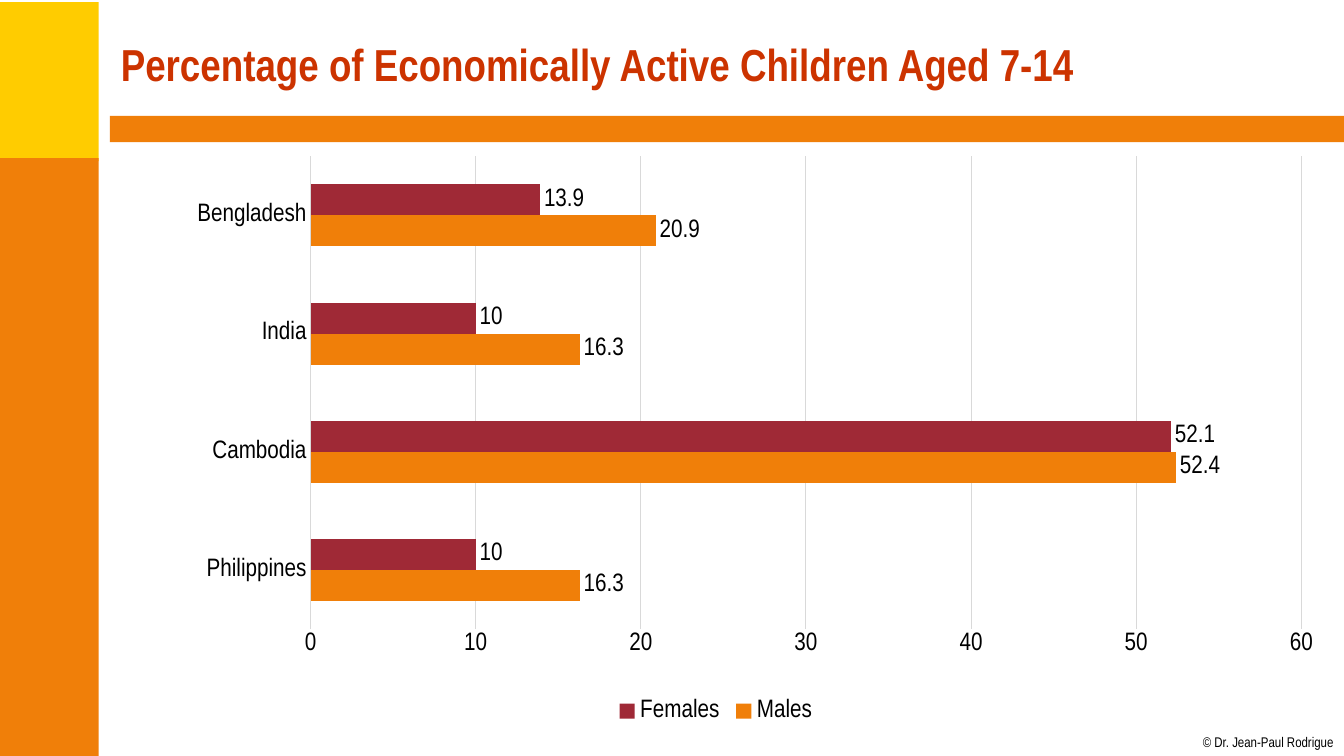
"""Build a slide charting the percentage of economically active children by country."""
from dataclasses import dataclass

import lxml.etree
import pptx
import pptx.chart.data
import pptx.dml.color
import pptx.enum.chart
import pptx.enum.shapes
import pptx.enum.text
import pptx.oxml
import pptx.oxml.ns
import pptx.util

Inches = pptx.util.Inches
FONT = "Arial Narrow"
COLORS = {
    "yellow": "FFCC00",
    "orange": "F07F09",
    "crimson": "9F2936",
    "title": "CC3300",
    "text": "000000",
    "grid": "D9D9D9",
}


@dataclass(frozen=True)
class Band:
    left: float
    top: float
    width: float
    height: float
    color: str


@dataclass(frozen=True)
class Caption:
    text: str
    left: float
    top: float
    width: float
    height: float
    size: float
    color: str
    bold: bool = False
    margin_x: float = 0
    wrap: bool = False


@dataclass(frozen=True)
class Group:
    name: str
    percentages: tuple[float, ...]
    color: str


BANDS = (
    Band(-0.02, 0.02, 1, 1.58, "yellow"),
    Band(-0.02, 1.57, 1, 5.93, "orange"),
    Band(1.09, 1.15, 12.24, 0.26, "orange"),
)
CAPTIONS = (
    Caption("© Dr. Jean-Paul Rodrigue", 11.93, 7.28, 1.31, 0.17, 10, "text"),
    Caption("Percentage of Economically Active Children Aged 7-14",
            1.1, 0.11, 12, 1.04, 32, "title", True, 0.1, True),
)
COUNTRIES = ("Philippines", "Cambodia", "India", "Bengladesh")
GROUPS = (
    Group("Males", (16.3, 52.4, 16.3, 20.9), "orange"),
    Group("Females", (10, 52.1, 10, 13.9), "crimson"),
)
PLOT_AREA = {"x": 0.165, "y": 0.021, "w": 0.819, "h": 0.81}


def rgb(color: str) -> pptx.dml.color.RGBColor:
    """Return the named colour."""
    return pptx.dml.color.RGBColor.from_string(COLORS[color])


def style_font(font, size: float, color: str = "text", bold: bool = False) -> None:
    """Apply the slide typeface with a size and colour."""
    font.name = FONT
    font.size = pptx.util.Pt(size)
    font.bold = bold
    font.color.rgb = rgb(color)


def draw_band(slide, band: Band) -> None:
    """Draw one solid decorative band."""
    shape = slide.shapes.add_shape(
        pptx.enum.shapes.MSO_SHAPE.RECTANGLE, Inches(band.left), Inches(band.top),
        Inches(band.width), Inches(band.height))
    shape.shadow.inherit = False
    shape.fill.solid()
    shape.fill.fore_color.rgb = rgb(band.color)
    shape.line.fill.background()


def draw_caption(slide, caption: Caption) -> None:
    """Draw one line of text."""
    box = slide.shapes.add_textbox(
        Inches(caption.left), Inches(caption.top),
        Inches(caption.width), Inches(caption.height))
    frame = box.text_frame
    frame.word_wrap = caption.wrap
    frame.vertical_anchor = pptx.enum.text.MSO_ANCHOR.MIDDLE
    frame.margin_left = frame.margin_right = Inches(caption.margin_x)
    frame.margin_top = frame.margin_bottom = 0
    paragraph = frame.paragraphs[0]
    paragraph.text = caption.text
    style_font(paragraph.font, caption.size, caption.color, caption.bold)


def style_line(line) -> None:
    """Apply the thin grey chart line."""
    line.color.rgb = rgb("grid")
    line.width = pptx.util.Pt(0.75)


def place_plot_area(chart) -> None:
    """Fix the inner plot area as fractions of the chart."""
    plot_area = chart.plots[0]._element.getparent()
    for layout in plot_area.findall(pptx.oxml.ns.qn("c:layout")):
        plot_area.remove(layout)
    layout = pptx.oxml.parse_xml(f"<c:layout {pptx.oxml.ns.nsdecls('c')}/>")
    manual = lxml.etree.SubElement(layout, pptx.oxml.ns.qn("c:manualLayout"))
    settings = {"layoutTarget": "inner", "xMode": "edge", "yMode": "edge", **PLOT_AREA}
    for tag, value in settings.items():
        lxml.etree.SubElement(manual, pptx.oxml.ns.qn(f"c:{tag}"), val=str(value))
    plot_area.insert(0, layout)


def draw_chart(slide) -> None:
    """Draw the clustered bars of both groups by country."""
    data = pptx.chart.data.CategoryChartData()
    data.categories = COUNTRIES
    for group in GROUPS:
        data.add_series(group.name, group.percentages)
    chart = slide.shapes.add_chart(
        pptx.enum.chart.XL_CHART_TYPE.BAR_CLUSTERED,
        Inches(1.1), Inches(1.43), Inches(12), Inches(5.79), data).chart
    style_font(chart.font, 18)
    chart.has_title = False
    chart.has_legend = True
    chart.legend.position = pptx.enum.chart.XL_LEGEND_POSITION.BOTTOM
    chart.legend.include_in_layout = False
    style_font(chart.legend.font, 18)

    bars = chart.plots[0]
    bars.gap_width = 182
    bars.overlap = 0
    bars.vary_by_categories = False
    for group, series in zip(GROUPS, bars.series):
        series.format.fill.solid()
        series.format.fill.fore_color.rgb = rgb(group.color)
        series.invert_if_negative = False
        labels = series.data_labels
        labels.show_value = True
        labels.position = pptx.enum.chart.XL_LABEL_POSITION.OUTSIDE_END
        style_font(labels.font, 18)

    countries, percentages = chart.category_axis, chart.value_axis
    for axis in (countries, percentages):
        axis.major_tick_mark = pptx.enum.chart.XL_TICK_MARK.NONE
        axis.minor_tick_mark = pptx.enum.chart.XL_TICK_MARK.NONE
        style_font(axis.tick_labels.font, 18)
    style_line(countries.format.line)
    percentages.minimum_scale, percentages.maximum_scale = 0, 60
    percentages.major_unit = 10
    percentages.format.line.fill.background()
    percentages.has_major_gridlines = True
    style_line(percentages.major_gridlines.format.line)
    place_plot_area(chart)


def main() -> None:
    """Assemble and save the slide."""
    deck = pptx.Presentation()
    deck.slide_width, deck.slide_height = Inches(13.33), Inches(7.5)
    slide = deck.slides.add_slide(deck.slide_layouts[6])
    for band in BANDS:
        draw_band(slide, band)
    for caption in CAPTIONS:
        draw_caption(slide, caption)
    draw_chart(slide)
    deck.save("out.pptx")


if __name__ == "__main__":
    main()
